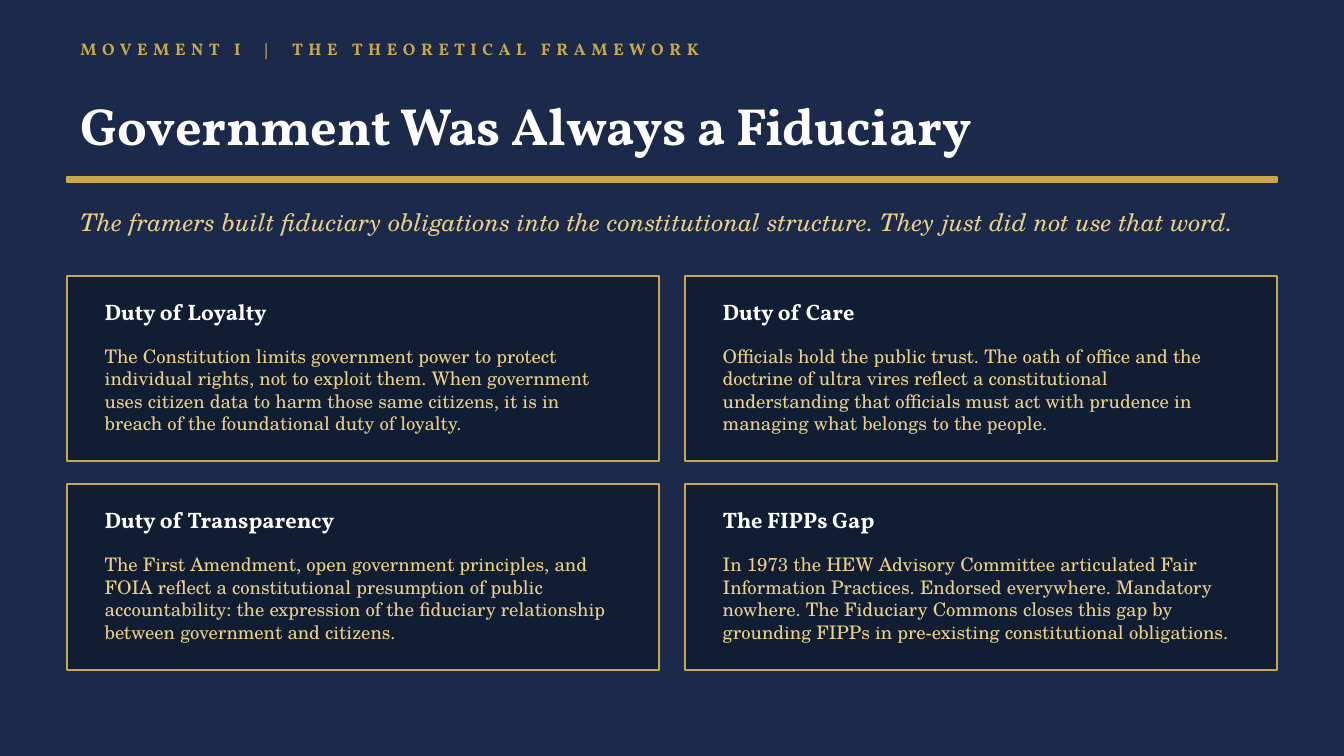
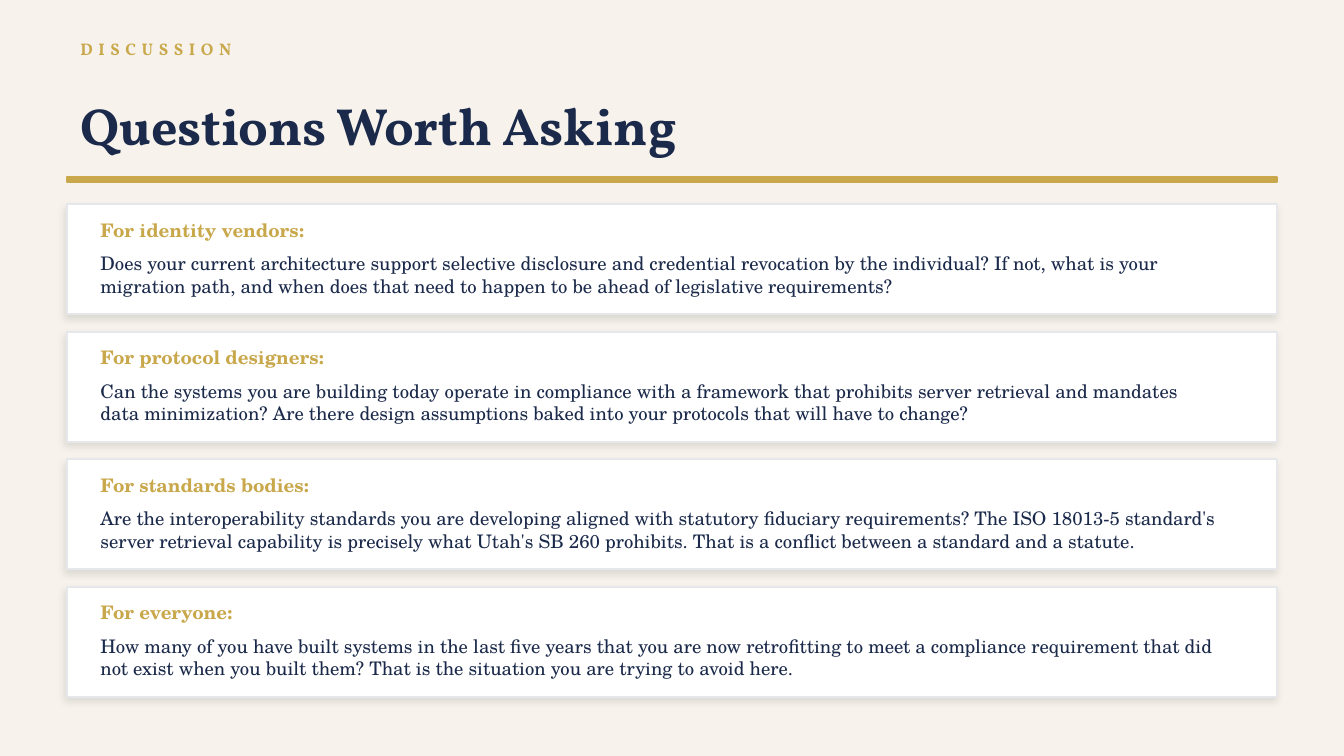
from dataclasses import dataclass

from lxml.etree import SubElement
from pptx import Presentation
from pptx.dml.color import RGBColor
from pptx.enum.shapes import MSO_SHAPE
from pptx.enum.text import MSO_ANCHOR
from pptx.oxml.ns import qn
from pptx.util import Cm, Pt

NAVY = RGBColor(0x1B, 0x2A, 0x4A)
DEEP_NAVY = RGBColor(0x11, 0x1D, 0x33)
GOLD = RGBColor(0xC9, 0xA8, 0x4C)
PALE_GOLD = RGBColor(0xE8, 0xD0, 0x8A)
CREAM = RGBColor(0xF7, 0xF3, 0xEC)
WHITE = RGBColor(0xFF, 0xFF, 0xFF)
GREY = RGBColor(0xE5, 0xE7, 0xEB)
SERIF = "TeX Gyre Schola"
DISPLAY = "Vollkorn"
MARGIN = 1.27
CONTENT_WIDTH = 22.86
EYEBROW = {"font": DISPLAY, "size": 9, "color": GOLD, "bold": True}


@dataclass(frozen=True)
class Area:
    """A rectangle in centimetres."""

    left: float
    top: float
    width: float
    height: float

    def moved(self, left: float, top: float) -> "Area":
        """Return the area shifted by the given offsets."""
        return Area(self.left + left, self.top + top, self.width, self.height)

    def lengths(self) -> tuple[Cm, Cm, Cm, Cm]:
        """Return the sides as lengths for a new shape."""
        return Cm(self.left), Cm(self.top), Cm(self.width), Cm(self.height)


@dataclass(frozen=True)
class Card:
    """The wording of one card."""

    heading: str
    body: str


@dataclass(frozen=True)
class CardGrid:
    """Layout and look of a set of cards; text areas are relative to a card."""

    frame: Area
    heading: Area
    body: Area
    columns: int
    column_step: float
    row_step: float
    fill: RGBColor
    line: RGBColor
    heading_format: dict
    body_format: dict
    shadow: bool = False


DUTY_GRID = CardGrid(
    frame=Area(MARGIN, 5.21, 11.18, 3.51),
    heading=Area(0.46, 0.3, 10.16, 0.76),
    body=Area(0.46, 1.14, 10.16, 2.03),
    columns=2,
    column_step=11.68,
    row_step=3.94,
    fill=DEEP_NAVY,
    line=GOLD,
    heading_format={"font": DISPLAY, "size": 12, "color": WHITE, "bold": True},
    body_format={"size": 10, "color": PALE_GOLD},
)
QUESTION_GRID = CardGrid(
    frame=Area(MARGIN, 3.86, CONTENT_WIDTH, 2.08),
    heading=Area(0.38, 0.2, 5.59, 0.56),
    body=Area(0.38, 0.56 + 0.2, 21.59, 1.14),
    columns=1,
    column_step=0,
    row_step=2.41,
    fill=WHITE,
    line=GREY,
    heading_format={"size": 10, "color": GOLD, "bold": True},
    body_format={"size": 10, "color": NAVY},
    shadow=True,
)

DUTIES = (
    Card(
        "Duty of Loyalty",
        "The Constitution limits government power to protect individual rights, not to "
        "exploit them. When government uses citizen data to harm those same citizens, "
        "it is in breach of the foundational duty of loyalty.",
    ),
    Card(
        "Duty of Care",
        "Officials hold the public trust. The oath of office and the doctrine of ultra "
        "vires reflect a constitutional understanding that officials must act with "
        "prudence in managing what belongs to the people.",
    ),
    Card(
        "Duty of Transparency",
        "The First Amendment, open government principles, and FOIA reflect a "
        "constitutional presumption of public accountability: the expression of the "
        "fiduciary relationship between government and citizens.",
    ),
    Card(
        "The FIPPs Gap",
        "In 1973 the HEW Advisory Committee articulated Fair Information Practices. "
        "Endorsed everywhere. Mandatory nowhere. The Fiduciary Commons closes this gap "
        "by grounding FIPPs in pre-existing constitutional obligations.",
    ),
)
QUESTIONS = (
    Card(
        "For identity vendors:",
        "Does your current architecture support selective disclosure and credential "
        "revocation by the individual? If not, what is your migration path, and when "
        "does that need to happen to be ahead of legislative requirements?",
    ),
    Card(
        "For protocol designers:",
        "Can the systems you are building today operate in compliance with a framework "
        "that prohibits server retrieval and mandates data minimization? Are there "
        "design assumptions baked into your protocols that will have to change?",
    ),
    Card(
        "For standards bodies:",
        "Are the interoperability standards you are developing aligned with statutory "
        "fiduciary requirements? The ISO 18013-5 standard's server retrieval capability "
        "is precisely what Utah's SB 260 prohibits. That is a conflict between a "
        "standard and a statute.",
    ),
    Card(
        "For everyone:",
        "How many of you have built systems in the last five years that you are now "
        "retrofitting to meet a compliance requirement that did not exist when you "
        "built them? That is the situation you are trying to avoid here.",
    ),
)


def add_span(para, text: str, *, size: float, color: RGBColor, font: str = SERIF,
             bold: bool = False, italic: bool = False, tracking: float = 0) -> None:
    """Add formatted text to a paragraph."""
    span = para.add_run()
    span.text = text
    span.font.name = font
    span.font.size = Pt(size)
    span.font.bold = bold
    span.font.italic = italic
    span.font.color.rgb = color
    if tracking:
        span.font._element.set("spc", str(round(tracking * 100)))


def add_text(page, area: Area, text: str, **text_format):
    """Add a wrapped, vertically centred text box and return its paragraph."""
    frame = page.shapes.add_textbox(*area.lengths()).text_frame
    frame.word_wrap = True
    frame.vertical_anchor = MSO_ANCHOR.MIDDLE
    para = frame.paragraphs[0]
    add_span(para, text, **text_format)
    return para


def add_box(page, area: Area, *, fill: RGBColor, line: RGBColor, shadow: bool = False) -> None:
    """Add an outlined rectangle, with a soft shadow if asked."""
    box = page.shapes.add_shape(MSO_SHAPE.RECTANGLE, *area.lengths())
    box.fill.solid()
    box.fill.fore_color.rgb = fill
    box.line.color.rgb = line
    box.line.width = Pt(1)
    box.shadow.inherit = False
    if shadow:
        effects = box._element.spPr.find(qn("a:effectLst"))
        outer = SubElement(effects, qn("a:outerShdw"), blurRad=str(Pt(4)), dist=str(Pt(2)),
                           dir=str(135 * 60000), algn="bl", rotWithShape="0")
        tint = SubElement(outer, qn("a:srgbClr"), val="000000")
        SubElement(tint, qn("a:alpha"), val="10000")


def add_page(deck, *, background: RGBColor, title_color: RGBColor, title: str,
             section: str, topic: str = ""):
    """Add a page with its eyebrow, title and gold rule."""
    page = deck.slides.add_slide(deck.slide_layouts[6])
    page.background.fill.solid()
    page.background.fill.fore_color.rgb = background
    eyebrow = add_text(page, Area(MARGIN, 0.56, CONTENT_WIDTH, 0.71), section,
                       tracking=3, **EYEBROW)
    if topic:
        for text, tracking in ((" ", 8.2), ("|", 3), (" ", 8.2), (topic, 3)):
            add_span(eyebrow, text, tracking=tracking, **EYEBROW)
    add_text(page, Area(MARGIN, 1.4, CONTENT_WIDTH, 1.9), title,
             font=DISPLAY, size=28, color=title_color, bold=True)
    add_box(page, Area(MARGIN, 3.35, CONTENT_WIDTH, 0.1), fill=GOLD, line=GOLD)
    return page


def add_cards(page, grid: CardGrid, cards: tuple[Card, ...]) -> None:
    """Draw the cards row by row."""
    for index, card in enumerate(cards):
        row, column = divmod(index, grid.columns)
        frame = grid.frame.moved(column * grid.column_step, row * grid.row_step)
        add_box(page, frame, fill=grid.fill, line=grid.line, shadow=grid.shadow)
        add_text(page, grid.heading.moved(frame.left, frame.top), card.heading,
                 **grid.heading_format)
        add_text(page, grid.body.moved(frame.left, frame.top), card.body, **grid.body_format)


def main() -> None:
    """Build and save the deck."""
    deck = Presentation()
    deck.slide_width, deck.slide_height = Cm(25.4), Cm(14.29)

    framework = add_page(deck, background=NAVY, title_color=WHITE,
                         title="Government Was Always a Fiduciary",
                         section="MOVEMENT I", topic="THE THEORETICAL FRAMEWORK")
    add_text(framework, Area(MARGIN, 3.68, CONTENT_WIDTH, 1.02),
             "The framers built fiduciary obligations into the constitutional structure. "
             "They just did not use that word.", size=13, color=PALE_GOLD, italic=True)
    add_cards(framework, DUTY_GRID, DUTIES)

    discussion = add_page(deck, background=CREAM, title_color=NAVY,
                          title="Questions Worth Asking", section="DISCUSSION")
    add_cards(discussion, QUESTION_GRID, QUESTIONS)

    deck.save("out.pptx")


if __name__ == "__main__":
    main()
